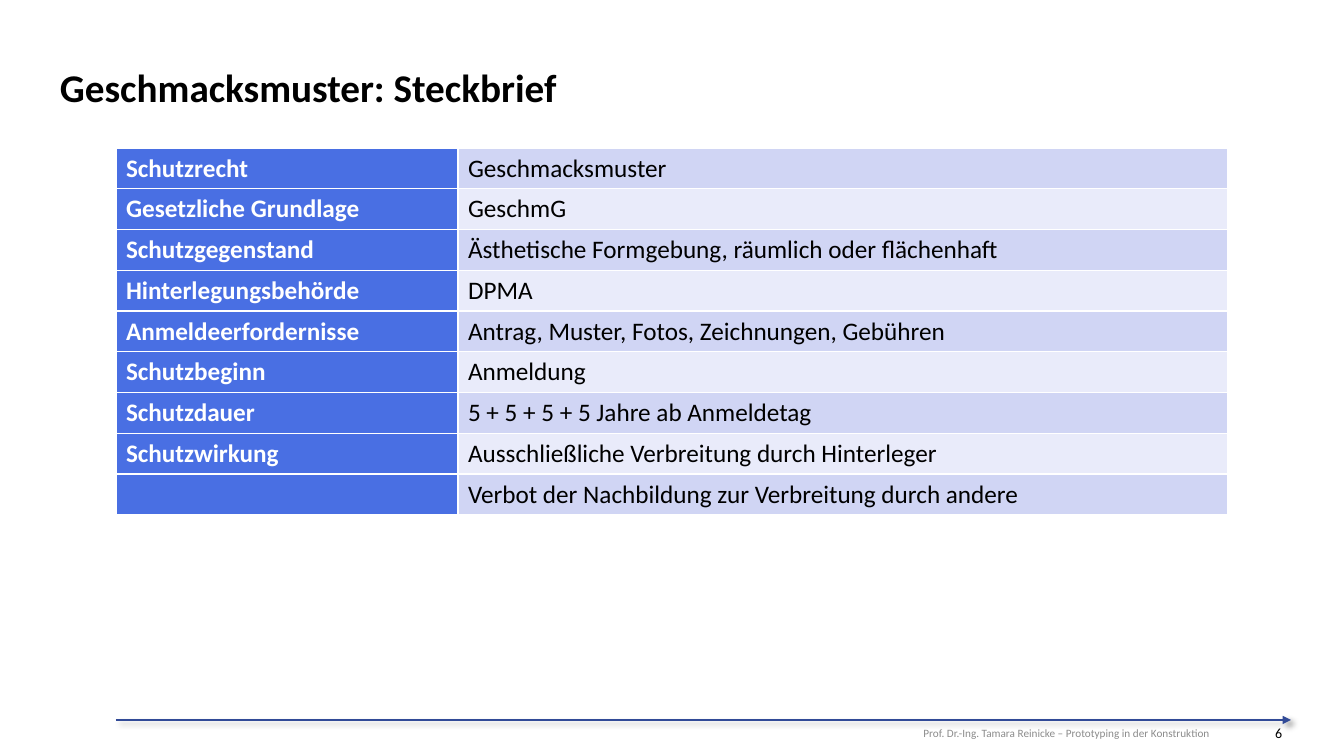
import pptx
import pptx.util
import pptx.dml.color
import pptx.enum.shapes
import pptx.enum.text
import pptx.oxml
import pptx.oxml.ns

TITLE = "Geschmacksmuster: Steckbrief"
FOOTER = "Prof. Dr.-Ing. Tamara Reinicke – Prototyping in der Konstruktion"
PAGE_NUMBER = "6"
PROFILE = [
    ("Schutzrecht", "Geschmacksmuster"),
    ("Gesetzliche Grundlage", "GeschmG"),
    ("Schutzgegenstand", "Ästhetische Formgebung, räumlich oder flächenhaft"),
    ("Hinterlegungsbehörde", "DPMA"),
    ("Anmeldeerfordernisse", "Antrag, Muster, Fotos, Zeichnungen, Gebühren"),
    ("Schutzbeginn", "Anmeldung"),
    ("Schutzdauer", "5 + 5 + 5 + 5 Jahre ab Anmeldetag"),
    ("Schutzwirkung", "Ausschließliche Verbreitung durch Hinterleger"),
    ("", "Verbot der Nachbildung zur Verbreitung durch andere"),
]

COLORS = {
    "black": "000000",
    "white": "FFFFFF",
    "gray": "8C8C8C",
    "rule": "314A97",
    "label": "496FE3",
    "band_dark": "D0D5F4",
    "band_light": "E9EBFA",
}
FONT = "Calibri"
SLIDE_SIZE = (1344, 756)
TITLE_AREA = (60, 69, 1223, 95)
FOOTER_AREA = (831, 721, 389, 24)
NUMBER_AREA = (1204, 720, 88, 27)
TABLE_ORIGIN = (116, 148)
TABLE_HEIGHT = 367
COLUMN_WIDTHS = (342, 770)
RULE_LEFT, RULE_RIGHT, RULE_TOP = 116, 1291, 720

LEFT = pptx.enum.text.PP_ALIGN.LEFT
RIGHT = pptx.enum.text.PP_ALIGN.RIGHT


def px(length):
    return round(length * 914400 / 100.8)


def rgb(name):
    return pptx.dml.color.RGBColor.from_string(COLORS[name])


def xml(markup):
    tag, rest = markup.split(" ", 1)
    return pptx.oxml.parse_xml(f"{tag} {pptx.oxml.ns.nsdecls('a')} {rest}")


def write(para, text, color, **formats):
    span = para.add_run()
    span.text = text
    for name, value in {"name": FONT, **formats}.items():
        setattr(span.font, name, value)
    span.font.color.rgb = rgb(color)


def add_text(page, area, text, color, align, inset=None, spacing=None, **formats):
    box = page.shapes.add_textbox(*map(px, area))
    frame = box.text_frame
    frame.word_wrap = True
    if inset is not None:
        for side in ("left", "top", "right", "bottom"):
            setattr(frame, f"margin_{side}", px(inset))
    para = frame.paragraphs[0]
    para.alignment = align
    para.line_spacing = spacing
    write(para, text, color, **formats)


def add_rule(page):
    rule = page.shapes.add_connector(
        pptx.enum.shapes.MSO_CONNECTOR.STRAIGHT,
        *map(px, (RULE_LEFT, RULE_TOP, RULE_RIGHT, RULE_TOP)))
    rule.line.color.rgb = rgb("rule")
    rule.line.width = pptx.util.Pt(1)
    rule.line._get_or_add_ln().append(xml('<a:tailEnd type="triangle"/>'))
    rule._element.spPr.append(xml(
        '<a:effectLst ><a:outerShdw blurRad="50800" dist="38100" dir="2700000">'
        f'<a:srgbClr val="{COLORS["black"]}"><a:alpha val="40000"/></a:srgbClr>'
        '</a:outerShdw></a:effectLst>'))


def style_cell(cell, fill):
    cell.fill.solid()
    cell.fill.fore_color.rgb = rgb(fill)
    properties = cell._tc.get_or_add_tcPr()
    for index, side in enumerate(("lnL", "lnR", "lnT", "lnB")):
        properties.insert(index, xml(
            f'<a:{side} w="12700"><a:solidFill><a:srgbClr val="{COLORS["white"]}"/>'
            f'</a:solidFill></a:{side}>'))


def add_profile(page):
    row_height = TABLE_HEIGHT / len(PROFILE)
    area = (*TABLE_ORIGIN, sum(COLUMN_WIDTHS), TABLE_HEIGHT)
    table = page.shapes.add_table(
        len(PROFILE), len(COLUMN_WIDTHS), *map(px, area)).table
    table.first_row = False
    table.horz_banding = False
    for column, width in zip(table.columns, COLUMN_WIDTHS):
        column.width = px(width)
    for index, entry in enumerate(PROFILE):
        table.rows[index].height = px(row_height)
        band = "band_light" if index % 2 else "band_dark"
        looks = (("label", "white", True), (band, "black", False))
        for column, (text, (fill, color, bold)) in enumerate(zip(entry, looks)):
            cell = table.cell(index, column)
            style_cell(cell, fill)
            if text:
                write(cell.text_frame.paragraphs[0], text, color,
                      size=pptx.util.Pt(18), bold=bold)


def main():
    deck = pptx.Presentation()
    deck.slide_width, deck.slide_height = map(px, SLIDE_SIZE)
    page = deck.slides.add_slide(deck.slide_layouts[6])
    add_rule(page)
    add_text(page, FOOTER_AREA, FOOTER, "gray", RIGHT, size=pptx.util.Pt(8))
    add_text(page, NUMBER_AREA, PAGE_NUMBER, "black", RIGHT, size=pptx.util.Pt(10))
    add_text(page, TITLE_AREA, TITLE, "black", LEFT, inset=0, spacing=0.9,
             size=pptx.util.Pt(28), bold=True)
    add_profile(page)
    deck.save("out.pptx")


if __name__ == "__main__":
    main()
